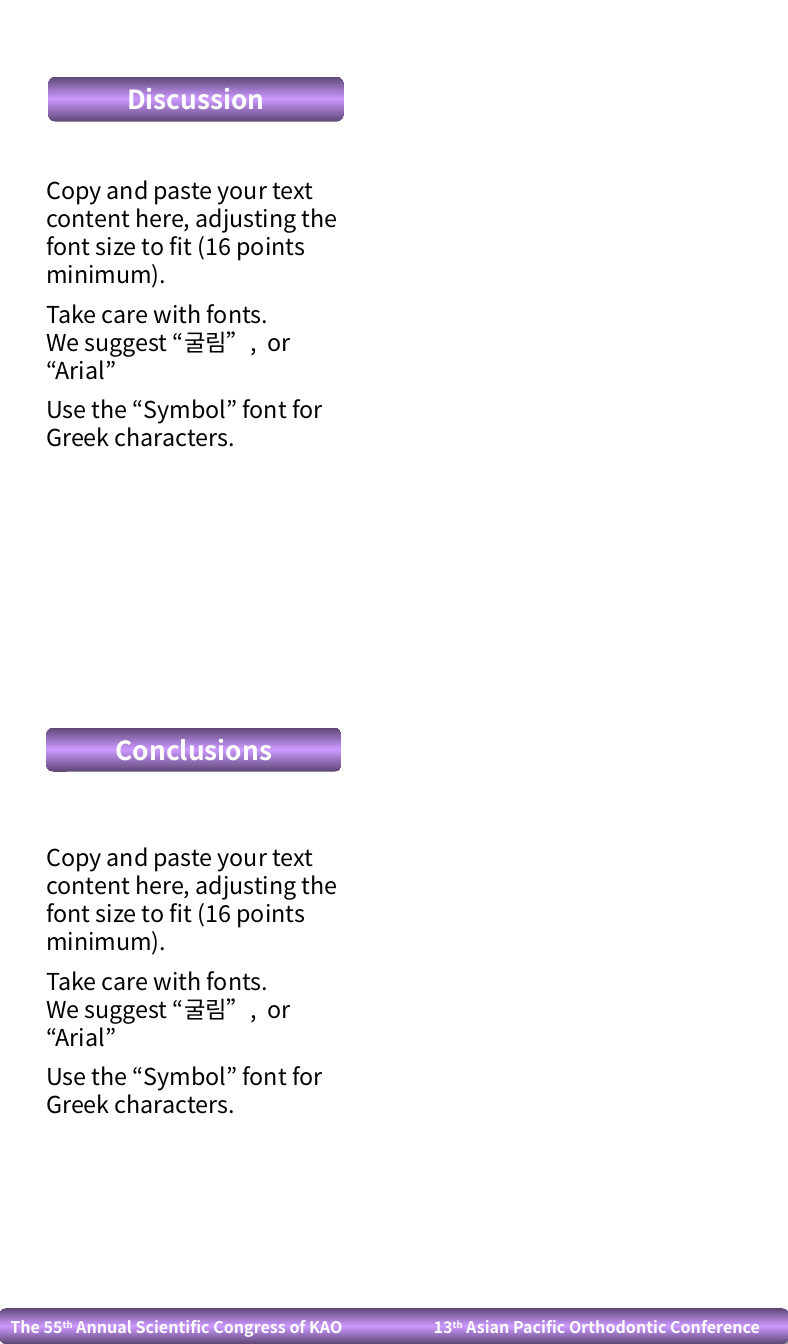
from copy import deepcopy

from lxml import etree
from pptx import Presentation
from pptx.dml.color import RGBColor
from pptx.enum.shapes import MSO_SHAPE
from pptx.enum.text import MSO_ANCHOR, PP_ALIGN
from pptx.oxml import parse_xml
from pptx.oxml.ns import qn
from pptx.util import Inches, Pt

ROUND = MSO_SHAPE.ROUNDED_RECTANGLE
TOP, MIDDLE = MSO_ANCHOR.TOP, MSO_ANCHOR.MIDDLE
LEFT, CENTER = PP_ALIGN.LEFT, PP_ALIGN.CENTER

# Content
BODY = [
    "Copy and paste your text content here, adjusting the font size to fit (16 points minimum).",
    "Take care with fonts. \vWe suggest “굴림”,  or “Arial”",
    "Use the “Symbol” font for Greek characters.",
]
# title, bar (left, top, width, height), top of body text
SECTIONS = [
    ("Discussion", (0.46, 0.73, 2.81, 0.43), 1.64),
    ("Conclusions", (0.44, 6.93, 2.81, 0.42), 7.99),
]
# footer runs: text, raised
FOOTER = [
    ("The 55", False), ("th", True),
    (" Annual Scientific Congress of KAO\t13", False), ("th", True),
    (" Asian Pacific Orthodontic Conference", False),
]

# Style
FONT = "Noto Sans CJK KR"
LEADING = 1.2
DARK = RGBColor(0x5E, 0x47, 0x76)
LILAC = RGBColor(0xCC, 0x99, 0xFF)
WHITE = RGBColor(0xFF, 0xFF, 0xFF)
BLACK = RGBColor(0, 0, 0)
SHADOW = (
    '<a:effectLst xmlns:a="http://schemas.openxmlformats.org/drawingml/2006/main">'
    '<a:outerShdw blurRad="50800" dist="38100" dir="2700000" algn="tl">'
    '<a:srgbClr val="000000"><a:alpha val="40000"/></a:srgbClr>'
    '</a:outerShdw></a:effectLst>'
)

deck = Presentation()
deck.slide_width, deck.slide_height = Inches(7.5), Inches(12.8)
slide = deck.slides.add_slide(deck.slide_layouts[6])


def add_bar(box):
    """Rounded bar shaded dark, lilac, dark from top to bottom."""
    bar = slide.shapes.add_shape(ROUND, *map(Inches, box))
    bar.adjustments[0] = 0.167
    bar.shadow.inherit = False
    bar.line.fill.background()
    bar.fill.gradient()
    bar.fill.gradient_angle = 90
    stops = bar._element.spPr.find(".//" + qn("a:gsLst"))
    stops.append(deepcopy(stops[-1]))
    for stop, place, color in zip(bar.fill.gradient_stops, (0, 0.5, 1), (DARK, LILAC, DARK)):
        stop.position = place
        stop.color.rgb = color
    return bar


def set_frame(frame, side, edge, anchor):
    frame.word_wrap = True
    frame.vertical_anchor = anchor
    frame.margin_left = frame.margin_right = Inches(side)
    frame.margin_top = frame.margin_bottom = Inches(edge)


def set_style(para, size, color, bold=False, align=LEFT):
    para.alignment = align
    para.line_spacing = Pt(size * LEADING)
    font = para.font
    font.name, font.size, font.bold = FONT, Pt(size), bold
    font.color.rgb = color
    east = etree.SubElement(font._element, qn("a:ea"))
    east.set("typeface", FONT)


# Footer bar
add_bar((0, 12.46, 7.5, 0.34))
foot = slide.shapes[0]._element.spPr
foot.replace(foot.find(qn("a:effectLst")), parse_xml(SHADOW))

# Sections
for title, box, top in SECTIONS:
    frame = add_bar(box).text_frame
    set_frame(frame, 0.08, 0.04, MIDDLE)
    frame.text = title
    set_style(frame.paragraphs[0], 18, WHITE, True, CENTER)

    frame = slide.shapes.add_textbox(
        Inches(0.36), Inches(top), Inches(2.99), Inches(2.76)).text_frame
    set_frame(frame, 0.08, 0.04, TOP)
    frame.text = "\n".join(BODY)
    for i, para in enumerate(frame.paragraphs):
        set_style(para, 16, BLACK)
        para.space_before = Pt(8 if i else 0)

# Footer text, second half starting at a tab stop
frame = slide.shapes.add_textbox(0, Inches(12.5), Inches(7.5), Inches(0.29)).text_frame
set_frame(frame, 0.1, 0.05, TOP)
para = frame.paragraphs[0]
for text, raised in FOOTER:
    run = para.add_run()
    run.text = text
    if raised:
        run.font._element.set("baseline", "30000")
set_style(para, 11, WHITE, True)
tabs = etree.Element(qn("a:tabLst"))
etree.SubElement(tabs, qn("a:tab"), pos=str(Inches(4.03)), algn="l")
para._p.pPr.find(qn("a:defRPr")).addprevious(tabs)

deck.save("out.pptx")
